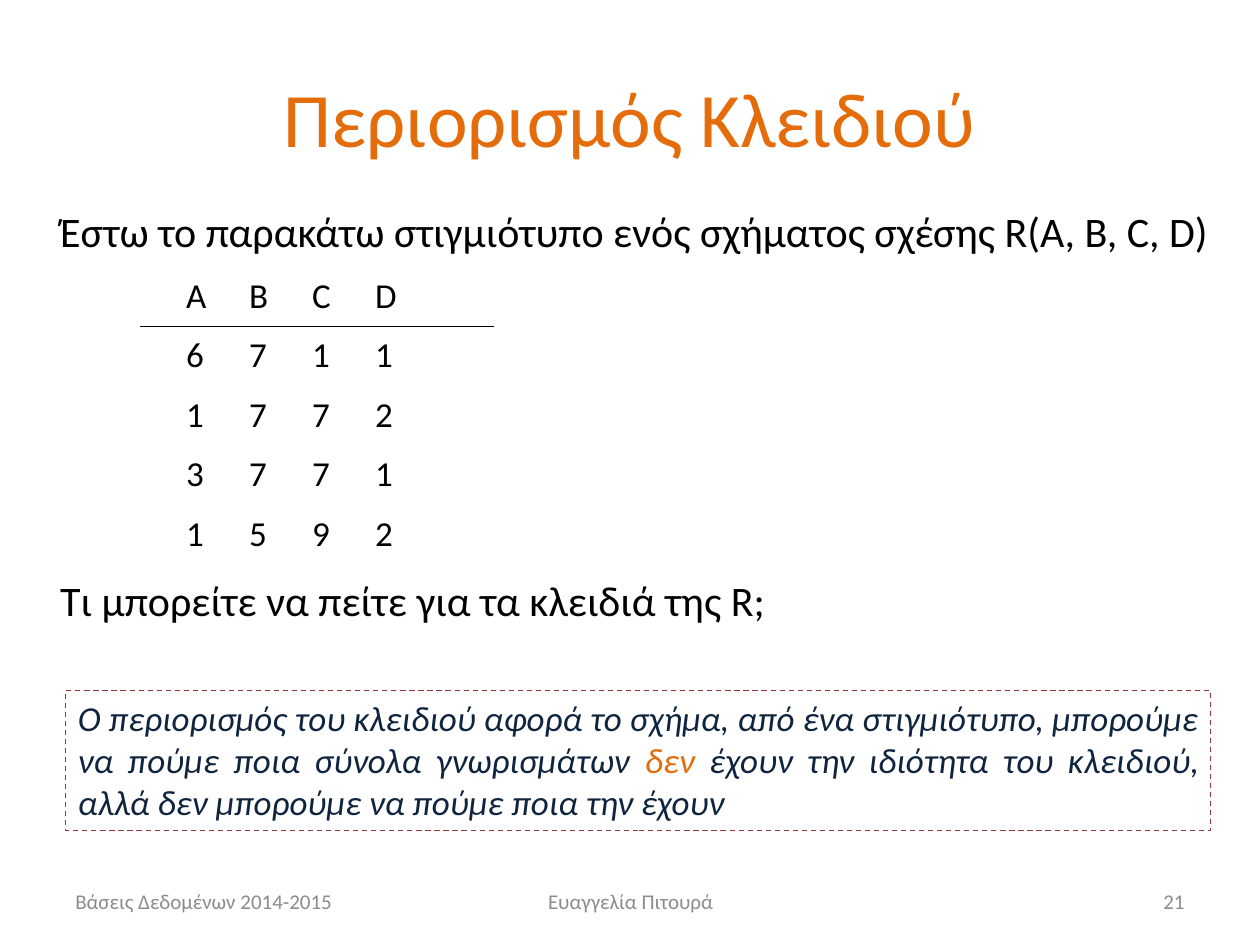
from lxml.etree import SubElement
from pptx import Presentation
from pptx.dml.color import RGBColor
from pptx.enum.dml import MSO_LINE
from pptx.enum.shapes import MSO_CONNECTOR, MSO_SHAPE
from pptx.enum.text import MSO_ANCHOR, PP_ALIGN
from pptx.oxml.ns import qn
from pptx.util import Inches, Pt

COLORS = {"title": "E46C0A", "text": "000000", "foot": "8C8C8C",
          "note": "0F243E", "edge": "953735"}


def style(para, size, color, italic=None):
    for run in para.runs:
        font = run.font
        font.name, font.size, font.italic = "Calibri", Pt(size), italic
        font.color.rgb = RGBColor.from_string(COLORS[color])


def add_box(left, top, width, height):
    box = slide.shapes.add_textbox(Inches(left), Inches(top),
                                   Inches(width), Inches(height))
    box.text_frame.word_wrap = True
    return box.text_frame


prs = Presentation()
prs.slide_width, prs.slide_height = Inches(10), Inches(7.5)
slide = prs.slides.add_slide(prs.slide_layouts[5])

# Title
title = slide.shapes.title
title.left, title.top = Inches(0.5), Inches(0.3)
title.width, title.height = Inches(9), Inches(1.25)
title.text_frame.text = "Περιορισμός Κλειδιού"
title.text_frame.vertical_anchor = MSO_ANCHOR.MIDDLE
head = title.text_frame.paragraphs[0]
head.alignment = PP_ALIGN.CENTER
style(head, 44, "title")

# Question with the relation's rows set on tab stops
rows = ["ΑΒCD", "6711", "1772", "3771", "1592"]
lines = [("Έστω το παρακάτω στιγμιότυπο ενός σχήματος σχέσης R(A, B, C, D)", 24)]
lines += [("\t\t" + "\t".join(row), 20) for row in rows]
lines += [("Τι μπορείτε να πείτε για τα κλειδιά της R;", 24)]
body = add_box(0.38, 1.58, 9.37, 3.64)
for i, (text, size) in enumerate(lines):
    para = body.add_paragraph() if i else body.paragraphs[0]
    para.text = text
    para.space_before = Pt(size / 2)
    style(para, size, "text")
    if "\t" in text:
        tabs = SubElement(para._p.get_or_add_pPr(), qn("a:tabLst"))
        for stop in range(1, 6):
            SubElement(tabs, qn("a:tab"), pos=str(Inches(0.5 * stop)), algn="l")

# Rule under the column names
rule = slide.shapes.add_connector(MSO_CONNECTOR.STRAIGHT, Inches(1.11),
                                  Inches(2.59), Inches(3.92), Inches(2.59))
rule.line.color.rgb = RGBColor.from_string(COLORS["text"])
rule.line.width = Pt(0.75)
SubElement(rule._element.spPr, qn("a:effectLst"))

# Dashed note; narrow right inset keeps the first line whole
note = slide.shapes.add_shape(MSO_SHAPE.RECTANGLE, Inches(0.52), Inches(5.48),
                              Inches(9.09), Inches(1.11))
note.shadow.inherit = False
note.fill.background()
note.line.color.rgb = RGBColor.from_string(COLORS["edge"])
note.line.width = Pt(0.75)
note.line.dash_style = MSO_LINE.DASH
note.text_frame.word_wrap = True
note.text_frame.margin_right = Inches(0.09)
note.text_frame.vertical_anchor = MSO_ANCHOR.TOP
para = note.text_frame.paragraphs[0]
para.alignment = PP_ALIGN.JUSTIFY
for text in ("Ο περιορισμός του κλειδιού αφορά το σχήμα, από ένα στιγμιότυπο, "
             "μπορούμε να πούμε ποια σύνολα γνωρισμάτων ",
             "δεν",
             " έχουν την ιδιότητα του κλειδιού, αλλά δεν μπορούμε να πούμε "
             "ποια την έχουν"):
    para.add_run().text = text
style(para, 20, "note", italic=True)
para.runs[1].font.color.rgb = RGBColor.from_string(COLORS["title"])

# Footer
for left, width, text, align in (
        (0.5, 2.33, "Βάσεις Δεδομένων 2014-2015", PP_ALIGN.LEFT),
        (3.42, 3.17, "Ευαγγελία Πιτουρά", PP_ALIGN.CENTER),
        (7.17, 2.33, "21", PP_ALIGN.RIGHT)):
    foot = add_box(left, 6.95, width, 0.4)
    foot.vertical_anchor = MSO_ANCHOR.MIDDLE
    foot.text = text
    foot.paragraphs[0].alignment = align
    style(foot.paragraphs[0], 12, "foot")

prs.save("out.pptx")
